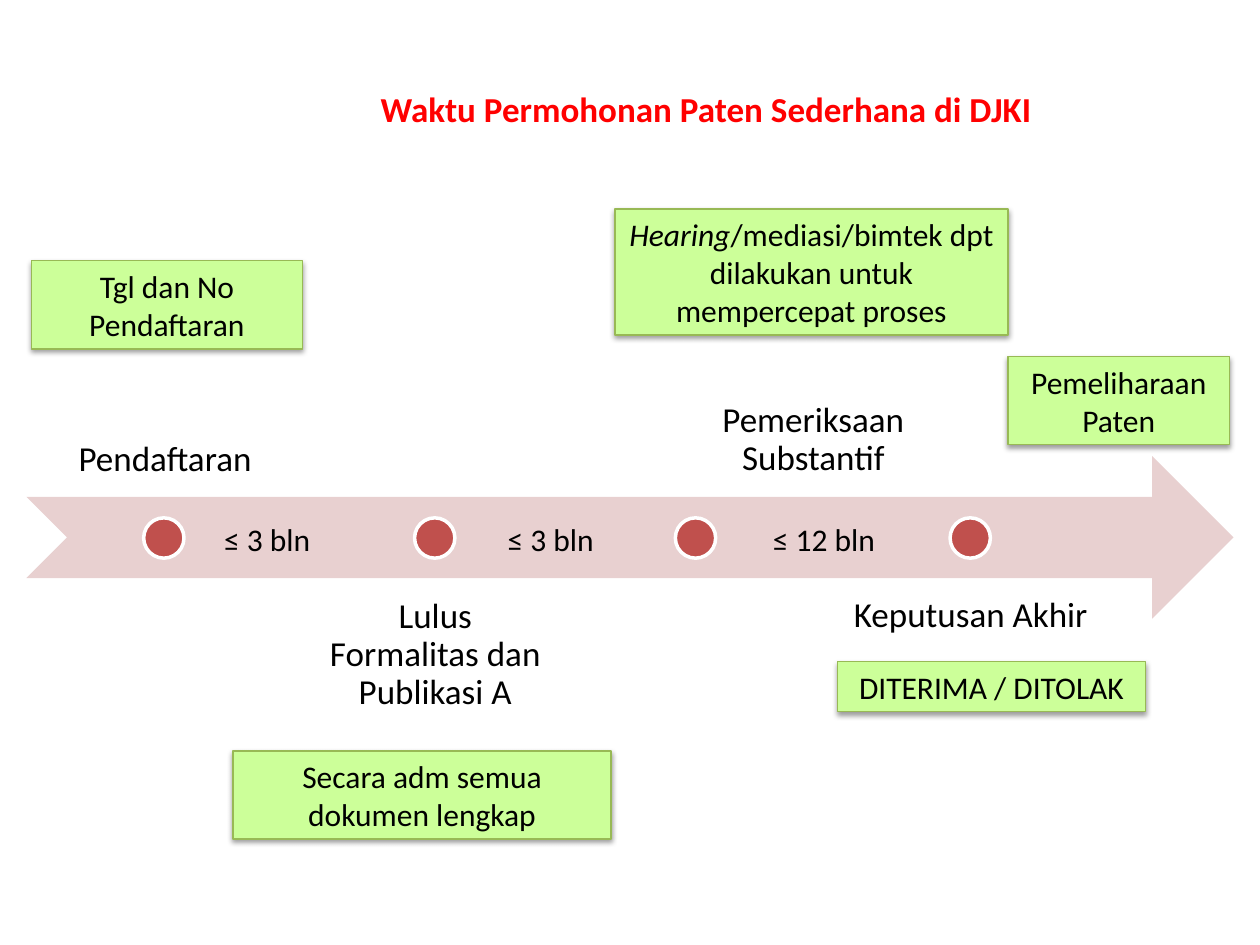
from lxml import etree
from pptx import Presentation
from pptx.dml.color import RGBColor
from pptx.enum.shapes import MSO_SHAPE
from pptx.enum.text import MSO_ANCHOR, PP_ALIGN
from pptx.oxml.ns import qn
from pptx.util import Inches, Pt

ARROW, CIRCLE, RECTANGLE = MSO_SHAPE.NOTCHED_RIGHT_ARROW, MSO_SHAPE.OVAL, MSO_SHAPE.RECTANGLE
TOP, BOTTOM = MSO_ANCHOR.TOP, MSO_ANCHOR.BOTTOM
CENTER = PP_ALIGN.CENTER
TITLE_ONLY = 5

COLORS = {"title": "FF0000", "text": "000000", "arrow": "E8D0D0", "marker": "C0504D",
          "ring": "FFFFFF", "note": "CCFF99", "note_line": "98B955"}


def add_shape(kind, place, fill, line=None, width=0):
    shape = page.shapes.add_shape(kind, *map(Inches, place))
    shape.shadow.inherit = False
    shape.fill.solid()
    shape.fill.fore_color.rgb = RGBColor.from_string(COLORS[fill])
    if line:
        shape.line.color.rgb = RGBColor.from_string(COLORS[line])
        shape.line.width = Pt(width)
    else:
        shape.line.fill.background()
    return shape


def write_text(box, spans, size, color="text", bold=False, anchor=TOP, spacing=1.0,
               margins=(0.1, 0.05)):
    frame = box.text_frame
    side, edge = map(Inches, margins)
    settings = {"word_wrap": True, "vertical_anchor": anchor, "margin_left": side,
                "margin_right": side, "margin_top": edge, "margin_bottom": edge}
    for name, value in settings.items():
        setattr(frame, name, value)
    para = frame.paragraphs[0]
    para.alignment, para.line_spacing = CENTER, spacing
    for text, italic in spans:
        span = para.add_run()
        span.text = text
        styles = {"name": "Calibri", "size": Pt(size), "bold": bold, "italic": italic}
        for name, value in styles.items():
            setattr(span.font, name, value)
        span.font.color.rgb = RGBColor.from_string(COLORS[color])


deck = Presentation()
deck.slide_width, deck.slide_height = Inches(10), Inches(7.5)
page = deck.slides.add_slide(deck.slide_layouts[TITLE_ONLY])

# Title
title = page.shapes.title
title.left, title.top, title.width, title.height = map(Inches, (1.8, 0.68, 7.61, 0.71))
write_text(title, [("Waktu Permohonan Paten Sederhana di DJKI", False)], 20, "title",
           bold=True, spacing=0.9)

# Timeline arrow
add_shape(ARROW, (0.21, 3.62, 9.58, 1.29), "arrow")

# Stages: label left and width, marker left; labels alternate above and below
stages = [("Pendaftaran", 0.22, 2.18, 1.14),
          ("Lulus Formalitas dan Publikasi A", 2.44, 2.03, 3.29),
          ("Pemeriksaan Substantif", 5.45, 2.01, 5.36),
          ("Keputusan Akhir", 6.57, 2.27, 7.54)]
for index, (label, left, width, marker_left) in enumerate(stages):
    top, anchor = [(2.66, BOTTOM), (4.59, TOP)][index % 2]
    box = page.shapes.add_textbox(*map(Inches, (left, top, width, 1.29)))
    write_text(box, [(label, False)], 20, anchor=anchor, spacing=0.9, margins=(0.16, 0.16))
    add_shape(CIRCLE, (marker_left, 4.11, 0.32, 0.32), "marker", "ring", 2)

# Durations between the stages
for duration, left, width in [("≤ 3 bln", 1.58, 1.08), ("≤ 3 bln", 3.83, 1.08),
                              ("≤ 12 bln", 5.83, 1.42)]:
    box = page.shapes.add_textbox(*map(Inches, (left, 4.08, width, 0.4)))
    write_text(box, [(duration, False)], 18)

# Green notes with a soft shadow
notes = [
    ((0.25, 2.07, 2.15, 0.7), [("Tgl dan No Pendaftaran", False)]),
    ((1.85, 5.96, 3, 0.7), [("Secara adm semua dokumen lengkap", False)]),
    ((4.88, 1.66, 3.12, 1), [("Hearing", True),
                             ("/mediasi/bimtek dpt dilakukan untuk mempercepat proses", False)]),
    ((6.65, 5.25, 2.44, 0.4), [("DITERIMA / DITOLAK", False)]),
    ((8, 2.83, 1.76, 0.7), [("Pemeliharaan Paten", False)]),
]
for place, spans in notes:
    note = add_shape(RECTANGLE, place, "note", "note_line", 0.75)
    write_text(note, spans, 18)
    effects = note.element.spPr.find(qn("a:effectLst"))
    shadow = etree.SubElement(effects, qn("a:outerShdw"), blurRad=str(Pt(3.1)),
                              dist=str(Pt(1.6)), dir="5400000", rotWithShape="0")
    tint = etree.SubElement(shadow, qn("a:srgbClr"), val=COLORS["text"])
    etree.SubElement(tint, qn("a:alpha"), val="38000")

deck.save("out.pptx")
